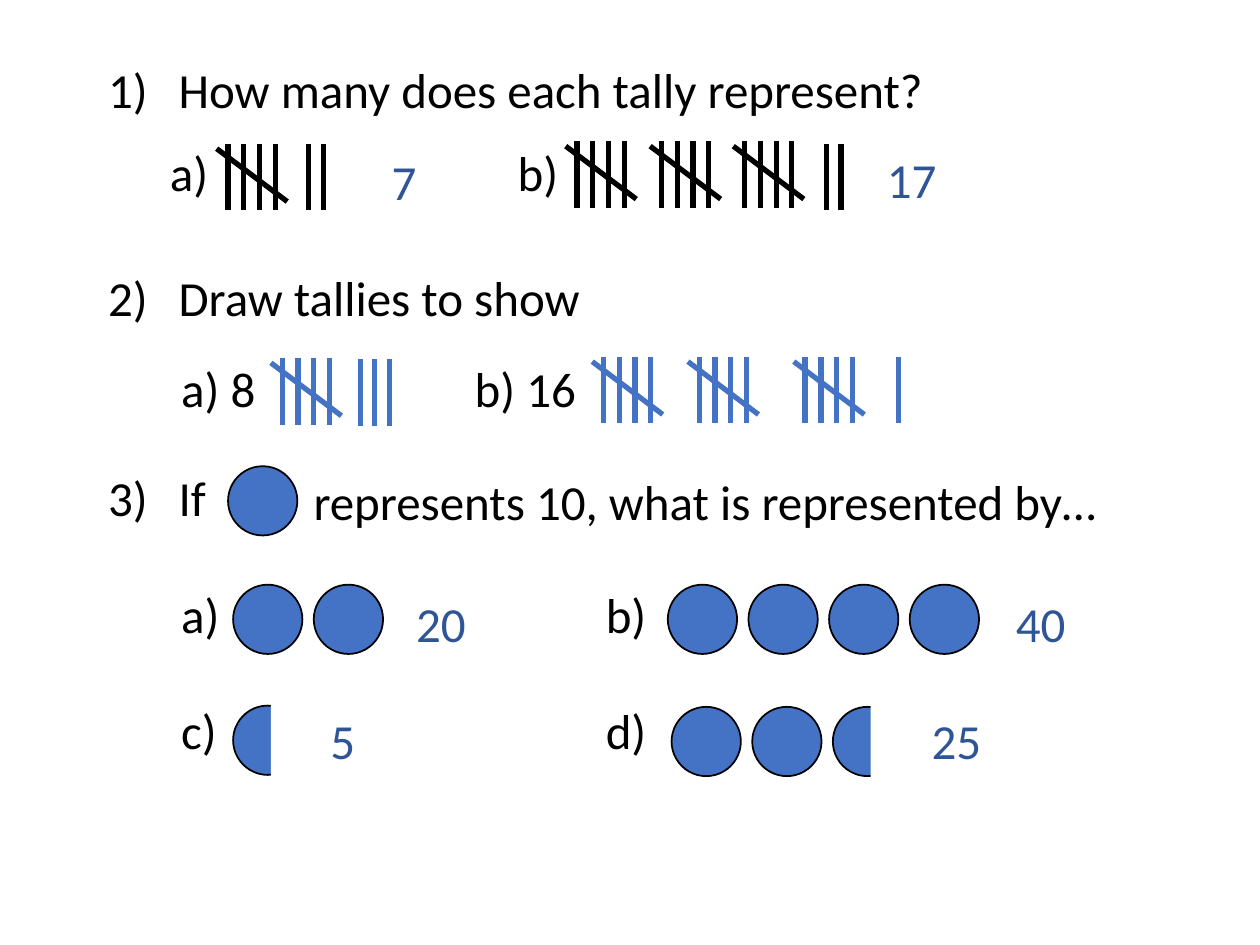
from dataclasses import dataclass

from lxml import etree
from pptx import Presentation
from pptx.dml.color import RGBColor as Color
from pptx.enum.shapes import MSO_CONNECTOR as Connector, MSO_SHAPE as Preset
from pptx.enum.text import PP_ALIGN as Align
from pptx.oxml.ns import qn
from pptx.util import Inches, Pt


@dataclass(frozen=True)
class Theme:
    font: str = "Calibri"
    size: float = 28
    ink: Color = Color(0x00, 0x00, 0x00)
    paper: Color = Color(0xFF, 0xFF, 0xFF)
    blue: Color = Color(0x44, 0x72, 0xC4)
    answer: Color = Color(0x2F, 0x55, 0x97)
    stroke: float = 3
    outline: float = 1


class Worksheet:
    def __init__(self, slide, theme):
        self.slide = slide
        self.theme = theme

    def text_box(self, left, top, width, height):
        box = self.slide.shapes.add_textbox(
            Inches(left), Inches(top), Inches(width), Inches(height))
        box.text_frame.word_wrap = True
        return box.text_frame

    def run(self, paragraph, text, color):
        run = paragraph.add_run()
        run.text = text
        run.font.name = self.theme.font
        run.font.size = Pt(self.theme.size)
        run.font.color.rgb = color

    def number(self, paragraph, start):
        properties = paragraph._p.get_or_add_pPr()
        properties.set("marL", str(Inches(0.56)))
        properties.set("indent", str(Inches(-0.56)))
        etree.SubElement(properties, qn("a:buFont"), typeface="+mj-lt")
        etree.SubElement(properties, qn("a:buAutoNum"),
                         type="arabicParenR", startAt=str(start))

    def tabs(self, paragraph, stops):
        tab_list = etree.SubElement(paragraph._p.get_or_add_pPr(), qn("a:tabLst"))
        for stop in stops:
            etree.SubElement(tab_list, qn("a:tab"), pos=str(Inches(stop)), algn="l")

    def questions(self, rows):
        frame = self.text_box(0.76, 0.42, 8.2, 6.23)
        for index, (text, number, stops, space) in enumerate(rows):
            paragraph = frame.add_paragraph() if index else frame.paragraphs[0]
            if number:
                self.number(paragraph, number)
            if stops:
                self.tabs(paragraph, stops)
            if space:
                paragraph.space_before = Pt(space)
            self.run(paragraph, text, self.theme.ink)

    def label(self, text, left, top, width, color, align=Align.LEFT):
        paragraph = self.text_box(left, top, width, 0.57).paragraphs[0]
        paragraph.alignment = align
        self.run(paragraph, text, color)

    def line(self, x1, y1, x2, y2, color):
        line = self.slide.shapes.add_connector(
            Connector.STRAIGHT, Inches(x1), Inches(y1), Inches(x2), Inches(y2))
        line.line.color.rgb = color
        line.line.width = Pt(self.theme.stroke)
        etree.SubElement(line._element.spPr, qn("a:effectLst"))

    def strokes(self, left, top, count, color, gap=0.115):
        for index in range(count):
            x = left + index * gap
            self.line(x, top, x, top + 0.53, color)

    def five(self, left, top, color):
        self.strokes(left, top, 4, color, 0.125)
        self.line(left - 0.09, top + 0.04, left + 0.47, top + 0.46, color)

    def shape(self, preset, left, top, width, height, fill, line=None):
        shape = self.slide.shapes.add_shape(
            preset, Inches(left), Inches(top), Inches(width), Inches(height))
        shape.shadow.inherit = False
        shape.fill.solid()
        shape.fill.fore_color.rgb = fill
        if line is None:
            shape.line.fill.background()
        else:
            shape.line.color.rgb = line
            shape.line.width = Pt(self.theme.outline)

    def counters(self, left, top, count):
        for index in range(count):
            self.shape(Preset.OVAL, left + index * 0.64, top, 0.55, 0.55,
                       self.theme.blue, self.theme.ink)

    def half_counter(self, left, top):
        self.counters(left, top, 1)
        self.shape(Preset.RECTANGLE, left + 0.3, top - 0.05, 0.5, 0.7, self.theme.paper)


def main():
    presentation = Presentation()
    presentation.slide_width = Inches(10)
    presentation.slide_height = Inches(7.5)
    theme = Theme()
    sheet = Worksheet(
        presentation.slides.add_slide(presentation.slide_layouts[6]), theme)

    sheet.questions([
        ("How many does each tally represent?", 1, None, 0),
        ("\ta)\tb)", None, (0.49, 3.25), 14),
        ("Draw tallies to show", 2, None, 38),
        ("\ta) 8\tb) 16", None, (0.58, 2.91), 18),
        ("If", 3, None, 29),
        ("\ta)\tb)", None, (0.58, 3.95), 33),
        ("\tc)\td)", None, (0.58, 3.95), 33),
    ])
    sheet.label("represents 10, what is represented by…", 2.39, 3.69, 6.6, theme.ink)

    for left, top, color in [
        (1.81, 1.14, theme.ink),
        (4.58, 1.12, theme.ink), (5.25, 1.12, theme.ink), (5.91, 1.12, theme.ink),
        (2.24, 2.84, theme.blue),
        (4.79, 2.83, theme.blue), (5.55, 2.83, theme.blue), (6.39, 2.83, theme.blue),
    ]:
        sheet.five(left, top, color)
    for left, top, count, color in [
        (2.45, 1.14, 2, theme.ink), (6.56, 1.14, 2, theme.ink),
        (2.86, 2.85, 3, theme.blue), (7.13, 2.83, 1, theme.blue),
    ]:
        sheet.strokes(left, top, count, color)

    for left, top, count in [
        (1.81, 3.7, 1), (1.85, 4.64, 2), (5.3, 4.64, 4), (5.33, 5.61, 2),
    ]:
        sheet.counters(left, top, count)
    sheet.half_counter(1.85, 5.6)
    sheet.half_counter(6.61, 5.61)

    for text, left, top, width, align in [
        ("7", 3.01, 1.15, 0.45, Align.LEFT), ("17", 6.94, 1.14, 0.65, Align.LEFT),
        ("20", 3.16, 4.66, 0.68, Align.CENTER), ("40", 7.91, 4.66, 0.7, Align.CENTER),
        ("5", 2.42, 5.59, 0.6, Align.CENTER), ("25", 7.27, 5.59, 0.64, Align.CENTER),
    ]:
        sheet.label(text, left, top, width, theme.answer, align)

    presentation.save("out.pptx")


if __name__ == "__main__":
    main()
